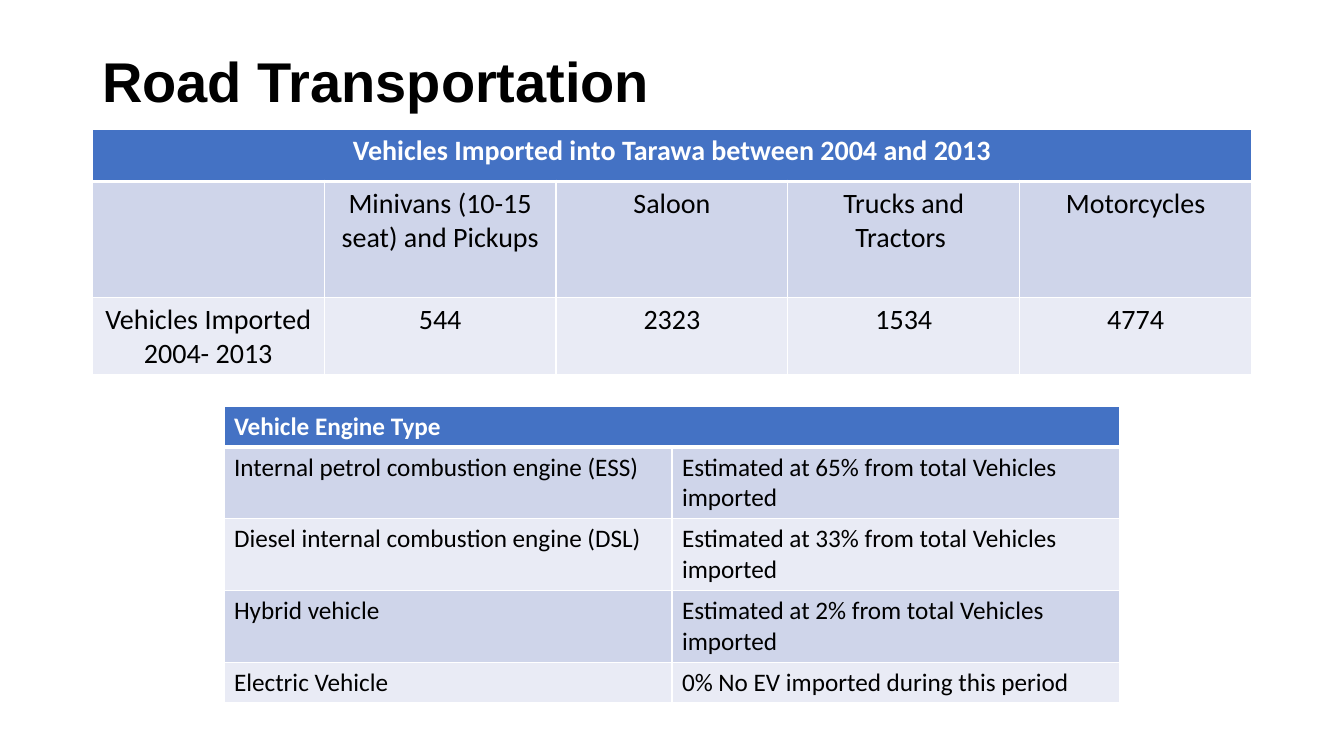
import pptx
import pptx.util
import pptx.dml.color
import pptx.enum.text
import pptx.oxml
import pptx.oxml.ns

Pt = pptx.util.Pt
RGBColor = pptx.dml.color.RGBColor
Align = pptx.enum.text.PP_ALIGN

BLACK = RGBColor(0x00, 0x00, 0x00)
WHITE = RGBColor(0xFF, 0xFF, 0xFF)
HEADER_BLUE = RGBColor(0x44, 0x72, 0xC4)
BAND_DARK = RGBColor(0xCF, 0xD5, 0xEA)
BAND_LIGHT = RGBColor(0xE9, 0xEB, 0xF5)

IMPORT_ROWS = [
    ["Vehicles Imported into Tarawa between 2004 and 2013", "", "", "", ""],
    ["", "Minivans (10-15 seat) and Pickups", "Saloon", "Trucks and Tractors ", "Motorcycles"],
    ["Vehicles Imported 2004- 2013", "544", "2323", "1534", "4774"],
]
ENGINE_ROWS = [
    ["Vehicle Engine Type", ""],
    ["Internal petrol combustion engine (ESS)", "Estimated at 65% from total Vehicles imported"],
    ["Diesel internal combustion engine (DSL)", "Estimated at 33% from total Vehicles imported"],
    ["Hybrid vehicle", "Estimated at 2% from total Vehicles imported"],
    ["Electric Vehicle", "0% No EV imported during this period"],
]


def format_runs(paragraph, font_name, size, color, bold):
    for run in paragraph.runs:
        run.font.name = font_name
        run.font.size = Pt(size)
        run.font.color.rgb = color
        run.font.bold = bold


def add_title(slide, text):
    shape = slide.shapes.add_textbox(Pt(66), Pt(28.8), Pt(828), Pt(63.4))
    text_frame = shape.text_frame
    text_frame.word_wrap = True
    text_frame.vertical_anchor = pptx.enum.text.MSO_ANCHOR.MIDDLE
    text_frame.text = text
    paragraph = text_frame.paragraphs[0]
    paragraph.line_spacing = 0.9
    format_runs(paragraph, "Arial", 40, BLACK, True)


def set_borders(cell, top, bottom):
    properties = cell._tc.get_or_add_tcPr()
    widths = {"lnL": 1, "lnR": 1, "lnT": top, "lnB": bottom}
    for position, (side, width) in enumerate(widths.items()):
        line = pptx.oxml.parse_xml(
            f'<a:{side} {pptx.oxml.ns.nsdecls("a")} w="{Pt(width)}">'
            f'<a:solidFill><a:srgbClr val="{WHITE}"/></a:solidFill></a:{side}>'
        )
        properties.insert(position, line)


def format_cell(cell, row_index, text, size, alignment):
    is_header = row_index == 0
    band = BAND_DARK if row_index % 2 else BAND_LIGHT
    cell.fill.solid()
    cell.fill.fore_color.rgb = HEADER_BLUE if is_header else band
    set_borders(cell, 3 if row_index == 1 else 1, 3 if is_header else 1)
    if text:
        cell.text_frame.text = text
        paragraph = cell.text_frame.paragraphs[0]
        paragraph.alignment = alignment
        format_runs(paragraph, "Calibri", size, WHITE if is_header else BLACK, is_header)


def add_banded_table(slide, rows, left, top, width, heights, size, alignment):
    column_count = len(rows[0])
    shape = slide.shapes.add_table(
        len(rows), column_count, Pt(left), Pt(top), Pt(width), Pt(sum(heights))
    )
    table = shape.table
    for column in table.columns:
        column.width = Pt(width / column_count)
    for row_index, (texts, height) in enumerate(zip(rows, heights)):
        table.rows[row_index].height = Pt(height)
        for column_index, text in enumerate(texts):
            format_cell(table.cell(row_index, column_index), row_index, text, size, alignment)
    table.cell(0, 0).merge(table.cell(0, column_count - 1))


def main():
    presentation = pptx.Presentation()
    presentation.slide_width = Pt(960)
    presentation.slide_height = Pt(540)
    slide = presentation.slides.add_slide(presentation.slide_layouts[6])
    add_title(slide, "Road Transportation")
    add_banded_table(
        slide, IMPORT_ROWS, 66, 92.2, 828, [37.4, 82.8, 55.5], 20, Align.CENTER
    )
    add_banded_table(
        slide, ENGINE_ROWS, 160, 290.2, 640, [29.2, 51.2, 51.2, 51.2, 29.2], 18, Align.LEFT
    )
    presentation.save("out.pptx")


if __name__ == "__main__":
    main()
